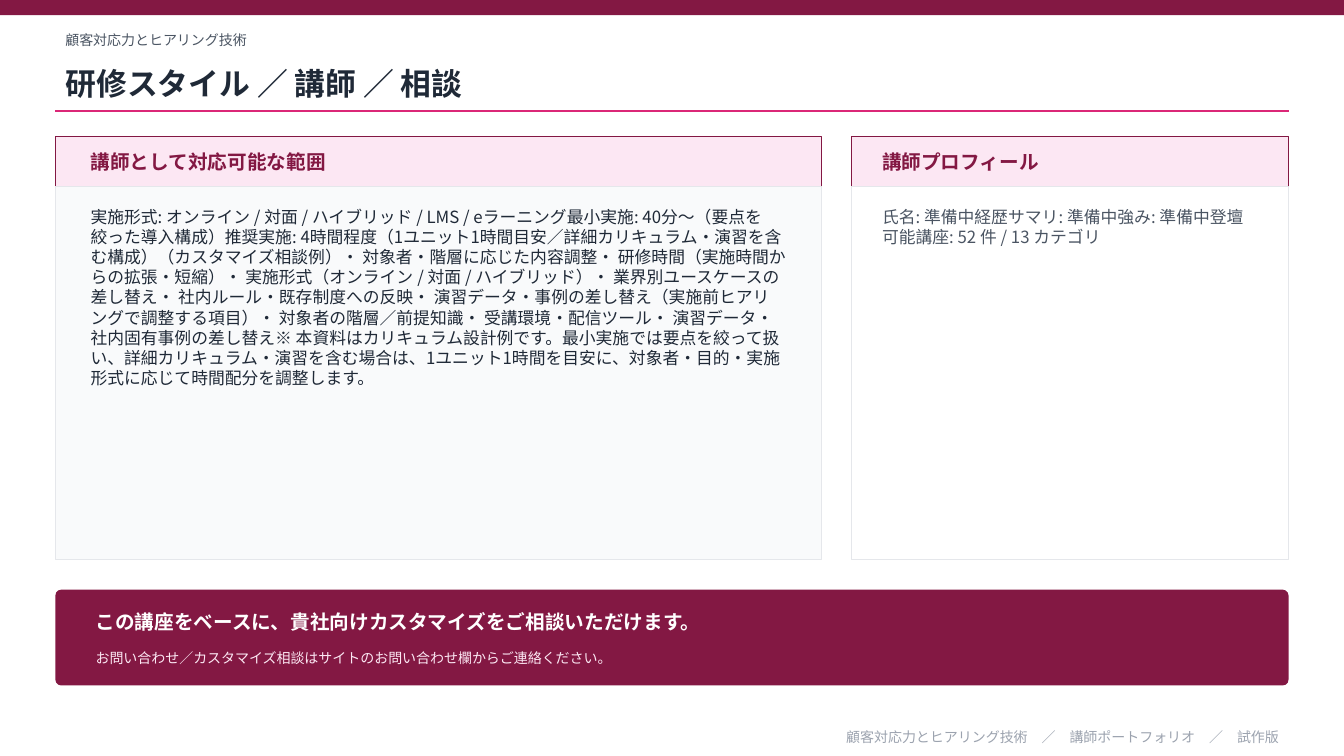
"""Build the training style, instructor and consultation slide."""
from dataclasses import dataclass

from lxml.etree import SubElement
from pptx import Presentation
from pptx.dml.color import RGBColor
from pptx.enum.shapes import MSO_CONNECTOR as Connector, MSO_SHAPE as Shape
from pptx.enum.text import MSO_ANCHOR as Anchor, MSO_AUTO_SIZE as AutoSize, PP_ALIGN as Align
from pptx.oxml.ns import qn
from pptx.util import Inches, Pt


@dataclass(frozen=True)
class Theme:
    """Colours, type sizes, font and grid cell of the deck."""
    wine: str = "831843"
    pink: str = "DB2777"
    blush: str = "FCE7F3"
    ink: str = "1F2937"
    slate: str = "4B5563"
    mist: str = "9CA3AF"
    edge: str = "E5E7EB"
    paper: str = "F9FAFB"
    white: str = "FFFFFF"
    small: int = 10
    body: int = 12
    heading: int = 14
    title: int = 22
    font: str = "Noto Sans CJK JP"
    cell: float = 0.1


class SlideBuilder:
    """Draws styled elements on one slide, measured in grid columns and rows."""

    def __init__(self, slide, theme):
        """Keep the slide and its theme."""
        self.slide, self.theme = slide, theme

    def grid(self, *cells):
        """Turn columns and rows into lengths."""
        return [Inches(count * self.theme.cell) for count in cells]

    def block(self, box, fill, edge=None, kind=Shape.RECTANGLE, corner=None):
        """Draw a filled shape with an optional thin edge."""
        block = self.slide.shapes.add_shape(kind, *self.grid(*box))
        block.shadow.inherit = False
        block.fill.solid()
        block.fill.fore_color.rgb = RGBColor.from_string(fill)
        if edge:
            block.line.color.rgb = RGBColor.from_string(edge)
            block.line.width = Pt(0.75)
        else:
            block.line.fill.background()
        if corner is not None:
            block.adjustments[0] = corner

    def rule(self, left, top, width, color):
        """Draw a horizontal rule."""
        rule = self.slide.shapes.add_connector(
            Connector.STRAIGHT, *self.grid(left, top, left + width, top))
        rule.line.color.rgb = RGBColor.from_string(color)
        rule.line.width = Pt(1)
        SubElement(rule._element.spPr, qn("a:effectLst"))

    def text(self, box, words, size, color, bold=False, align=Align.LEFT,
             anchor=Anchor.MIDDLE, after=0):
        """Add a wrapped text box."""
        holder = self.slide.shapes.add_textbox(*self.grid(*box))
        self.typeset(holder, words, size, color, bold, align, anchor, after)

    def title(self, box, words):
        """Place and format the title placeholder."""
        holder = self.slide.shapes.title
        sides = ("left", "top", "width", "height")
        for side, length in zip(sides, self.grid(*box)):
            setattr(holder, side, length)
        self.typeset(holder, words, self.theme.title, self.theme.ink, bold=True)

    def typeset(self, holder, words, size, color, bold=False, align=Align.LEFT,
                anchor=Anchor.MIDDLE, after=0):
        """Fill a text holder with one formatted paragraph."""
        frame = holder.text_frame
        paragraph = frame.paragraphs[0]
        run = paragraph.add_run()
        run.text = words
        formats = (
            (frame, {"word_wrap": True, "auto_size": AutoSize.NONE,
                     "vertical_anchor": anchor}),
            (paragraph, {"alignment": align, "space_after": Pt(after)}),
            (run.font, {"name": self.theme.font, "size": Pt(size), "bold": bold}),
        )
        for target, values in formats:
            for name, value in values.items():
                setattr(target, name, value)
        run.font.color.rgb = RGBColor.from_string(color)
        SubElement(run._r.get_or_add_rPr(), qn("a:ea"), typeface=self.theme.font)

    def panel(self, left, width, inset, heading, words, fill, color, after):
        """Draw a headed panel with body text."""
        theme = self.theme
        inner, inner_width = left + inset, width - 2 * inset
        self.block((left, 13.5, width, 5), theme.blush, theme.wine)
        self.text((inner, 13.5, inner_width, 5), heading, theme.heading, theme.wine, bold=True)
        self.block((left, 18.5, width, 37), fill, theme.edge)
        self.text((inner, 20, inner_width, 33.5), words, theme.body, color,
                  anchor=Anchor.TOP, after=after)


SCOPE = (
    "実施形式: オンライン / 対面 / ハイブリッド / LMS / eラーニング"
    "最小実施: 40分〜（要点を絞った導入構成）"
    "推奨実施: 4時間程度（1ユニット1時間目安／詳細カリキュラム・演習を含む構成）"
    "（カスタマイズ相談例）・ 対象者・階層に応じた内容調整"
    "・ 研修時間（実施時間からの拡張・短縮）"
    "・ 実施形式（オンライン / 対面 / ハイブリッド）"
    "・ 業界別ユースケースの差し替え・ 社内ルール・既存制度への反映"
    "・ 演習データ・事例の差し替え（実施前ヒアリングで調整する項目）"
    "・ 対象者の階層／前提知識・ 受講環境・配信ツール"
    "・ 演習データ・社内固有事例の差し替え"
    "※ 本資料はカリキュラム設計例です。最小実施では要点を絞って扱い、"
    "詳細カリキュラム・演習を含む場合は、1ユニット1時間を目安に、"
    "対象者・目的・実施形式に応じて時間配分を調整します。"
)
PROFILE = "氏名: 準備中経歴サマリ: 準備中強み: 準備中登壇可能講座: 52 件 / 13 カテゴリ"
COURSE = "顧客対応力とヒアリング技術"


def main():
    """Build and save the slide."""
    deck = Presentation()
    deck.slide_width, deck.slide_height = Inches(13.33), Inches(7.5)
    theme = Theme()
    page = SlideBuilder(deck.slides.add_slide(deck.slide_layouts[5]), theme)
    margin, span = 5.5, 122.3

    page.block((0, 0, 133.3, 1.5), theme.wine)
    page.text((margin, 2.5, span, 3), COURSE, theme.small, theme.slate)
    page.title((margin, 5.5, span, 5.5), "研修スタイル ／ 講師 ／ 相談")
    page.rule(margin, 11, span, theme.pink)

    scope_width, gutter = 76, 3
    profile_left = margin + scope_width + gutter
    page.panel(margin, scope_width, 2.5, "講師として対応可能な範囲", SCOPE,
               theme.paper, theme.ink, after=2)
    page.panel(profile_left, margin + span - profile_left, 2, "講師プロフィール", PROFILE,
               theme.white, theme.slate, after=4)

    page.block((margin, 58.5, span, 9.5), theme.wine,
               kind=Shape.ROUNDED_RECTANGLE, corner=0.06)
    invite_left, invite_width = margin + 3, span - 6
    page.text((invite_left, 59.7, invite_width, 4),
              "この講座をベースに、貴社向けカスタマイズをご相談いただけます。",
              theme.heading, theme.white, bold=True)
    page.text((invite_left, 63.5, invite_width, 3.5),
              "お問い合わせ／カスタマイズ相談はサイトのお問い合わせ欄からご連絡ください。",
              theme.small, theme.blush)
    page.text((margin, 72, span, 2.2), "　／　".join((COURSE, "講師ポートフォリオ", "試作版")),
              theme.small, theme.mist, align=Align.RIGHT)

    deck.save("out.pptx")


if __name__ == "__main__":
    main()
